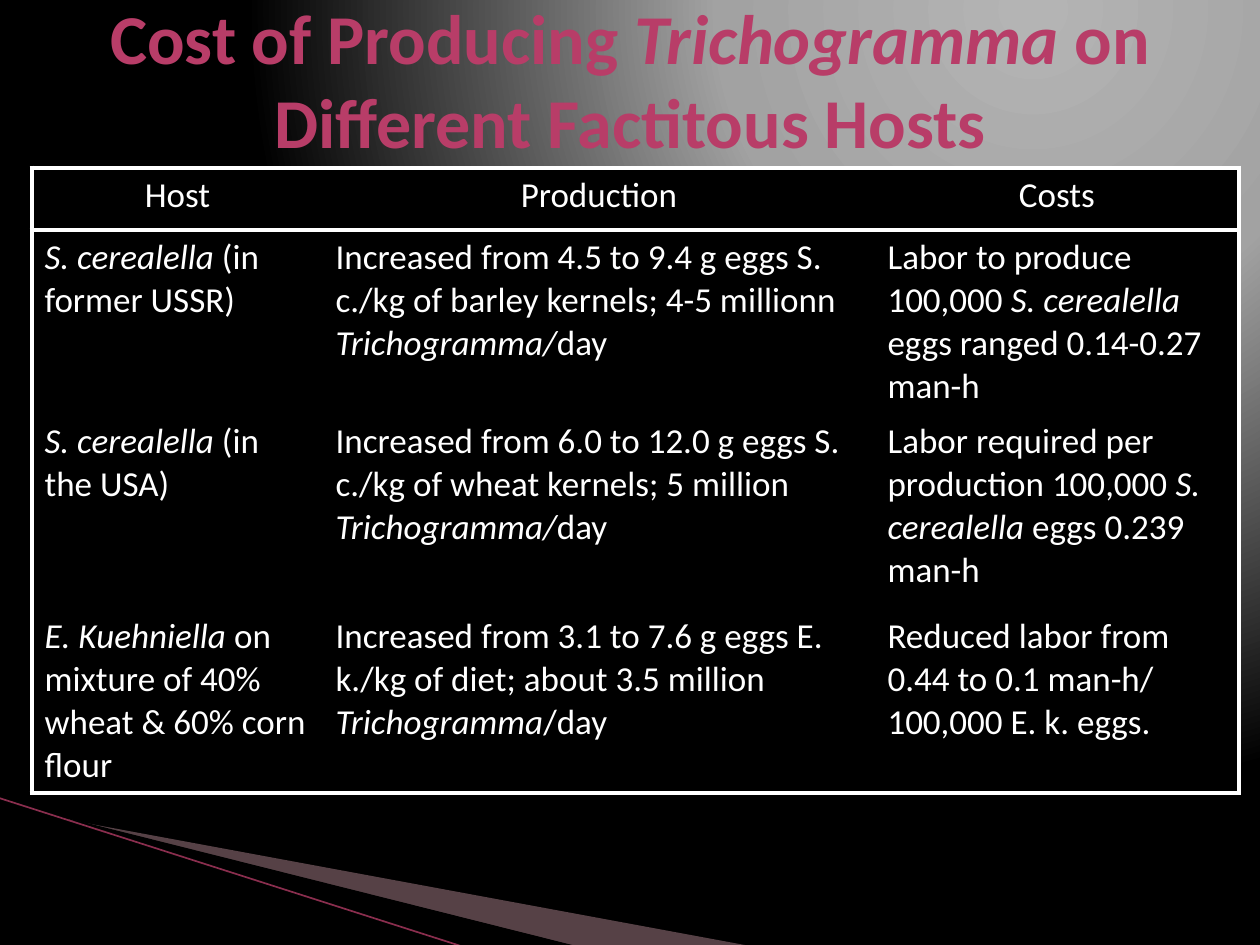
from lxml.etree import SubElement
from pptx import Presentation
from pptx.dml.color import RGBColor
from pptx.enum.shapes import MSO_CONNECTOR
from pptx.enum.text import MSO_ANCHOR, MSO_AUTO_SIZE, PP_ALIGN
from pptx.oxml import parse_xml
from pptx.oxml.ns import nsdecls, qn
from pptx.util import Pt

SCALE = 914400 / 126
COLORS = {
    "title": "B83D68", "text": "FFFFFF", "cell": "000000", "rule": "FFFFFF",
    "wedge": "D8A3AF", "shade": "000000", "line": "8A2E4E",
}
GLOW = [(0, "B4B4B4"), (40, "A2A2A2"), (100, "000000")]
COLS = [291, 552, 364]
ROWS = [62, 184, 195, 179]
# Asterisks enclose italic words
CELLS = [
    ["Host", "Production", "Costs"],
    ["*S. cerealella* (in former USSR)",
     "Increased from 4.5 to 9.4 g eggs S. c./kg of barley kernels; "
     "4-5 millionn *Trichogramma/*day",
     "Labor to produce 100,000 *S. cerealella* eggs ranged 0.14-0.27 man-h"],
    ["*S. cerealella* (in the USA)",
     "Increased from 6.0 to 12.0 g eggs S. c./kg of wheat kernels; "
     "5 million *Trichogramma/*day",
     "Labor required per production 100,000 *S. cerealella* eggs 0.239 man-h"],
    ["*E. Kuehniella* on mixture of 40% wheat & 60% corn flour",
     "Increased from 3.1 to 7.6 g eggs E. k./kg of diet; "
     "about 3.5 million *Trichogramma*/day",
     "Reduced labor from 0.44 to 0.1 man-h/ 100,000 E. k. eggs."],
]


def px(n):
    return round(n * SCALE)


def rgb(name):
    return RGBColor.from_string(COLORS[name])


class Page:
    font = "Calibri"

    def __init__(self, slide):
        self.slide = slide
        self.shapes = slide.shapes

    def glow(self, stops):
        """Circular gradient centred near the top right."""
        self.slide.background.fill.gradient()
        grad = self.slide.element.find(".//" + qn("a:gradFill"))
        for child in list(grad):
            grad.remove(child)
        items = SubElement(grad, qn("a:gsLst"))
        for pos, color in stops:
            stop = SubElement(items, qn("a:gs"), pos=str(pos * 1000))
            SubElement(stop, qn("a:srgbClr"), val=color)
        way = SubElement(grad, qn("a:path"), path="circle")
        SubElement(way, qn("a:fillToRect"), l="65000", t="0", r="0", b="98000")

    def label(self, frame, text, size, color, align, bold=False):
        para = frame.paragraphs[0]
        para.alignment = align
        para.font.name = self.font
        para.font.size = Pt(size)
        para.font.bold = bold
        para.font.color.rgb = rgb(color)
        for i, part in enumerate(text.split("*")):
            if part:
                run = para.add_run()
                run.text = part
                if i % 2:
                    run.font.italic = True

    def title(self, text, left, top, width, height):
        box = self.shapes.title
        box.left, box.top = px(left), px(top)
        box.width, box.height = px(width), px(height)
        frame = box.text_frame
        frame.word_wrap = True
        frame.auto_size = MSO_AUTO_SIZE.NONE
        frame.vertical_anchor = MSO_ANCHOR.MIDDLE
        self.label(frame, text, 40, "title", PP_ALIGN.CENTER, True)

    def outline(self, points, color, alpha=None):
        pen = self.shapes.build_freeform(*points[0], scale=SCALE)
        pen.add_line_segments(points[1:], close=True)
        shape = pen.convert_to_shape()
        shape.shadow.inherit = False
        shape.line.fill.background()
        shape.fill.solid()
        shape.fill.fore_color.rgb = rgb(color)
        if alpha:
            fill = shape.element.spPr.find(qn("a:solidFill"))
            SubElement(fill[0], qn("a:alpha"), val=str(alpha * 1000))

    def line(self, start, end, color, width):
        ends = [px(n) for n in (*start, *end)]
        line = self.shapes.add_connector(MSO_CONNECTOR.STRAIGHT, *ends)
        line.line.color.rgb = rgb(color)
        line.line.width = Pt(width)
        SubElement(line.element.spPr, qn("a:effectLst"))

    def border(self, cell, sides):
        """Rule the given sides and clear the others."""
        props = cell._tc.get_or_add_tcPr()
        for side in "LRTB":
            fill = "<a:noFill/>"
            if side in sides:
                fill = (f'<a:solidFill><a:srgbClr val="{COLORS["rule"]}"/>'
                        "</a:solidFill>")
            props.append(parse_xml(
                f'<a:ln{side} {nsdecls("a")} w="{Pt(3)}">{fill}</a:ln{side}>'))

    def table(self, cells, left, top, cols, rows):
        table = self.shapes.add_table(
            len(rows), len(cols), px(left), px(top),
            px(sum(cols)), px(sum(rows))).table
        table.first_row = table.horz_banding = False
        for col, width in zip(table.columns, cols):
            col.width = px(width)
        for row, height in zip(table.rows, rows):
            row.height = px(height)
        for r, texts in enumerate(cells):
            for c, text in enumerate(texts):
                cell = table.cell(r, c)
                align = PP_ALIGN.LEFT if r else PP_ALIGN.CENTER
                self.label(cell.text_frame, text, 20, "text", align)
                sides = "L" if c == 0 else "R" if c == len(cols) - 1 else ""
                sides += "T" if r < 2 else ""
                sides += "B" if r in (0, len(rows) - 1) else ""
                self.border(cell, sides)
                cell.fill.solid()
                cell.fill.fore_color.rgb = rgb("cell")


def main():
    deck = Presentation()
    deck.slide_width, deck.slide_height = px(1260), px(945)
    page = Page(deck.slides.add_slide(deck.slide_layouts[5]))

    # Backdrop
    page.glow(GLOW)
    page.outline([(69, 820), (750, 946), (575, 946), (69, 819)], "wedge", 40)
    page.outline([(67, 818), (576, 946), (469, 948), (68, 819)], "shade")
    page.line((-1, 798), (467, 948), "line", 0.95)

    # Title and cost table
    page.title("Cost of Producing *Trichogramma* on Different Factitous Hosts",
               63, 0, 1134, 158)
    page.table(CELLS, 32, 168, COLS, ROWS)
    deck.save("out.pptx")


if __name__ == "__main__":
    main()
